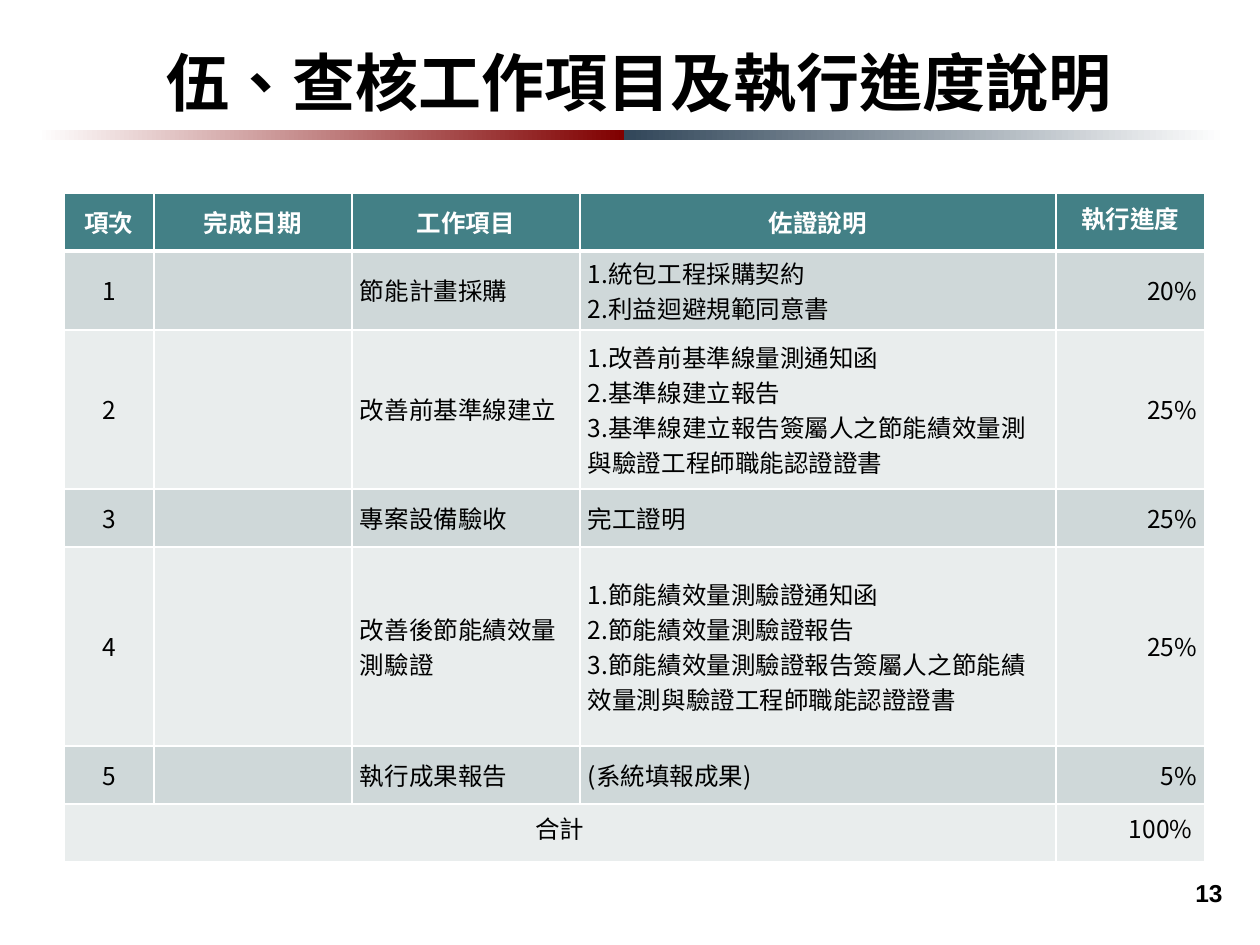
from dataclasses import dataclass

from lxml.etree import SubElement
from pptx import Presentation
from pptx.dml.color import RGBColor
from pptx.enum.shapes import MSO_SHAPE
from pptx.enum.text import MSO_ANCHOR, PP_ALIGN
from pptx.oxml.ns import qn
from pptx.util import Emu, Pt


@dataclass(frozen=True)
class Theme:
    cjk: str = "Noto Sans CJK SC"
    latin: str = "Arial"
    title_size: int = 36
    body_size: int = 14
    black: str = "000000"
    white: str = "FFFFFF"
    header: str = "438086"
    bands: tuple = ("CFD8D9", "E9EDED")
    rule_red: str = "800000"
    rule_blue: str = "314659"


THEME = Theme()
LEFT, CENTER, RIGHT = PP_ALIGN.LEFT, PP_ALIGN.CENTER, PP_ALIGN.RIGHT

COLUMNS = [90, 198, 228, 476, 149]
ROWS = [58, 79, 159, 58, 199, 58, 58]
HEADINGS = ["項次", "完成日期", "工作項目", "佐證說明", "執行進度"]
ALIGNMENTS = [CENTER, CENTER, LEFT, LEFT, RIGHT]
WORK_ITEMS = [
    ("1", "", "節能計畫採購",
     "1.統包工程採購契約\n2.利益迴避規範同意書", "20%"),
    ("2", "", "改善前基準線建立",
     "1.改善前基準線量測通知函\n2.基準線建立報告\n"
     "3.基準線建立報告簽屬人之節能績效量測與驗證工程師職能認證證書", "25%"),
    ("3", "", "專案設備驗收", "完工證明", "25%"),
    ("4", "", "改善後節能績效量測驗證",
     "1.節能績效量測驗證通知函\n2.節能績效量測驗證報告\n"
     "3.節能績效量測驗證報告簽屬人之節能績效量測與驗證工程師職能認證證書", "25%"),
    ("5", "", "執行成果報告", "(系統填報成果)", "5%"),
]


def px(length):
    """Turn px (126 to the inch) into EMU."""
    return Emu(round(length * 914400 / 126))


def write(frame, text, size=THEME.body_size, font=THEME.cjk, color=THEME.black,
          bold=False, align=LEFT, spacing=None):
    frame.text = text
    for paragraph in frame.paragraphs:
        paragraph.alignment = align
        if spacing:
            paragraph.line_spacing = Pt(spacing)
        for run in paragraph.runs:
            run.font.size = Pt(size)
            run.font.name = font
            run.font.bold = bold
            run.font.color.rgb = RGBColor.from_string(color)
            properties = run.font._element
            properties.set("lang", "zh-TW")
            SubElement(properties, qn("a:ea"), typeface=font)


def add_title(slide, left, top, width, height):
    title = slide.shapes.title
    title.left, title.top = px(left), px(top)
    title.width, title.height = px(width), px(height)
    frame = title.text_frame
    frame.word_wrap = False
    frame.vertical_anchor = MSO_ANCHOR.MIDDLE
    write(frame, "伍、查核工作項目及執行進度說明", size=THEME.title_size,
          bold=True, align=CENTER)


def add_rule(slide, left, top, width, height):
    """Two bars that fade from the middle to the sides."""
    middle = 587
    bars = [(left, middle, THEME.white, THEME.rule_red),
            (left + middle, width - middle, THEME.rule_blue, THEME.white)]
    for bar_left, bar_width, start, end in bars:
        bar = slide.shapes.add_shape(MSO_SHAPE.RECTANGLE, px(bar_left), px(top),
                                     px(bar_width), px(height))
        bar.shadow.inherit = False
        bar.line.fill.background()
        bar.fill.gradient()
        bar.fill.gradient_angle = 0
        for stop, color, position in zip(bar.fill.gradient_stops, (start, end), (0, 1)):
            stop.color.rgb = RGBColor.from_string(color)
            stop.position = position


def style_cell(cell, fill, bottom=1, top=1):
    """White borders first, then the fill, as the schema orders them."""
    properties = cell._tc.get_or_add_tcPr()
    for side, points in (("L", 1), ("R", 1), ("T", top), ("B", bottom)):
        line = SubElement(properties, qn(f"a:ln{side}"), w=str(Pt(points)))
        solid = SubElement(line, qn("a:solidFill"))
        SubElement(solid, qn("a:srgbClr"), val=THEME.white)
    cell.fill.solid()
    cell.fill.fore_color.rgb = RGBColor.from_string(fill)


def fill_cell(cell, text, **text_format):
    cell.vertical_anchor = MSO_ANCHOR.MIDDLE
    cell.margin_left = cell.margin_right = px(8)
    cell.margin_top = cell.margin_bottom = 0
    write(cell.text_frame, text, **text_format)


def add_progress_table(slide, left, top):
    table = slide.shapes.add_table(len(ROWS), len(COLUMNS), px(left), px(top),
                                   px(sum(COLUMNS)), px(sum(ROWS))).table
    for column, width in zip(table.columns, COLUMNS):
        column.width = px(width)
    for row, height in zip(table.rows, ROWS):
        row.height = px(height)

    # Header row
    for column, heading in enumerate(HEADINGS):
        cell = table.cell(0, column)
        style_cell(cell, THEME.header, bottom=3)
        fill_cell(cell, heading, color=THEME.white, bold=True, align=CENTER,
                  spacing=16 if column == len(HEADINGS) - 1 else 20)

    # Work items
    for row, item in enumerate(WORK_ITEMS, start=1):
        for column, (text, align) in enumerate(zip(item, ALIGNMENTS)):
            cell = table.cell(row, column)
            style_cell(cell, THEME.bands[(row - 1) % 2], top=3 if row == 1 else 1)
            fill_cell(cell, text, align=align, spacing=20)

    # Total row
    last = len(ROWS) - 1
    for column in range(len(COLUMNS)):
        style_cell(table.cell(last, column), THEME.bands[1])
    table.cell(last, 0).merge(table.cell(last, 3))
    write(table.cell(last, 0).text_frame, "合計", align=CENTER)
    write(table.cell(last, 4).text_frame, "100%", align=RIGHT)


def add_page_number(slide, left, top, width, height):
    frame = slide.shapes.add_textbox(px(left), px(top), px(width), px(height)).text_frame
    frame.word_wrap = True
    frame.vertical_anchor = MSO_ANCHOR.MIDDLE
    write(frame, "13", font=THEME.latin, bold=True, align=RIGHT)


def main():
    deck = Presentation()
    deck.slide_width, deck.slide_height = px(1260), px(945)
    slide = deck.slides.add_slide(deck.slide_layouts[5])
    add_rule(slide, 37, 130, 1189, 10)
    add_page_number(slide, 973, 861, 262, 63)
    add_title(slide, 149, 37, 980, 89)
    add_progress_table(slide, 64, 193)
    deck.save("out.pptx")


if __name__ == "__main__":
    main()
